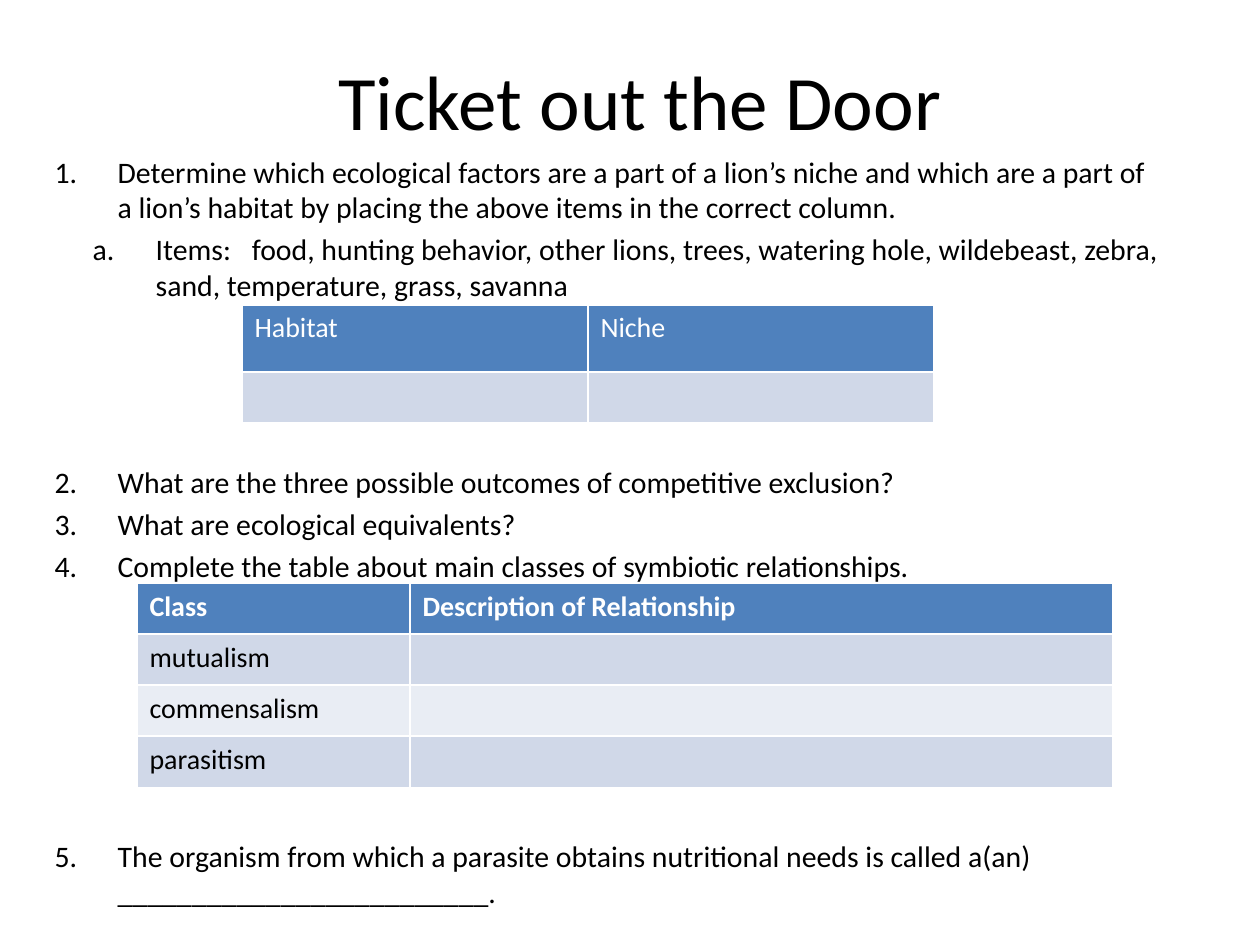
import pptx
import pptx.dml.color
import pptx.enum.text
import pptx.oxml.ns
import pptx.util
from lxml import etree

PX = 914400 / 126
FONT = "Calibri"
COLORS = {"text": "000000", "header": "4F81BD", "header_text": "FFFFFF",
          "band_dark": "D0D8E8", "band_light": "E9EDF4"}
HANGING = 63

# level, text, extra gap in points before the question
QUESTIONS = [
    (0, "Determine which ecological factors are a part of a lion’s niche and which are "
        "a part of a lion’s habitat by placing the above items in the correct column.", None),
    (1, "Items: food, hunting behavior, other lions, trees, watering hole, wildebeast, "
        "zebra, sand, temperature, grass, savanna", None),
    (0, "What are the three possible outcomes of competitive exclusion?", 92.5),
    (0, "What are ecological equivalents?", None),
    (0, "Complete the table about main classes of symbiotic relationships.", None),
    (0, "The organism from which a parasite obtains nutritional needs is called a(an) "
        "_________________________.", 145.5),
]
NUMBERING = [("arabicPeriod", 63), ("alphaLcPeriod", 101)]


def px(length):
    return pptx.util.Emu(round(length * PX))


def color(name):
    return pptx.dml.color.RGBColor.from_string(COLORS[name])


def place(shape, box):
    shape.left, shape.top, shape.width, shape.height = map(px, box)


def style_runs(para, size, color_name, bold=False):
    for span in para.runs:
        span.font.name = FONT
        span.font.size = pptx.util.Pt(size)
        span.font.bold = bold
        span.font.color.rgb = color(color_name)


def number(para, scheme, left):
    props = para._p.get_or_add_pPr()
    props.set("marL", str(px(left)))
    props.set("indent", str(-px(HANGING)))
    etree.SubElement(props, pptx.oxml.ns.qn("a:buFont")).set("typeface", FONT)
    etree.SubElement(props, pptx.oxml.ns.qn("a:buAutoNum")).set("type", scheme)


def add_label_text(para, text):
    """Write 'label: rest' with a widened space after the label."""
    label, rest = text.split(" ", 1)
    for part in (label, " ", rest):
        para.add_run().text = part
    para.runs[1]._r.get_or_add_rPr().set("spc", "800")


def fill_title(page, box):
    title = page.shapes.title
    place(title, box)
    title.text_frame.text = "Ticket out the Door"
    style_runs(title.text_frame.paragraphs[0], 44, "text")


def fill_questions(page, box):
    body = page.placeholders[1]
    place(body, box)
    frame = body.text_frame
    frame.auto_size = pptx.enum.text.MSO_AUTO_SIZE.NONE
    for index, (level, text, gap) in enumerate(QUESTIONS):
        para = frame.add_paragraph() if index else frame.paragraphs[0]
        para.level = level
        if level:
            add_label_text(para, text)
        else:
            para.text = text
        if gap:
            para.space_before = pptx.util.Pt(gap)
        number(para, *NUMBERING[level])
        style_runs(para, 17, "text")


def add_answer_table(page, left, top, widths, heights, rows, bold_header):
    frame = page.shapes.add_table(len(heights), len(widths), px(left), px(top),
                                  px(sum(widths)), px(sum(heights)))
    table = frame.table
    for column, width in zip(table.columns, widths):
        column.width = px(width)
    for r, (row, height) in enumerate(zip(table.rows, heights)):
        row.height = px(height)
        fill = "header" if r == 0 else ("band_light", "band_dark")[r % 2]
        for cell, text in zip(row.cells, rows[r]):
            cell.fill.solid()
            cell.fill.fore_color.rgb = color(fill)
            if text:
                cell.text_frame.text = text
                style_runs(cell.text_frame.paragraphs[0], 16,
                           "text" if r else "header_text", bold_header and r == 0)


def main():
    deck = pptx.Presentation()
    deck.slide_width, deck.slide_height = px(1260), px(945)
    page = deck.slides.add_slide(deck.slide_layouts[1])
    fill_title(page, (73, 32, 1134, 136))
    fill_questions(page, (42, 147, 1134, 766))
    add_answer_table(page, 242, 305, [346, 346], [67, 50],
                     [("Habitat", "Niche"), ("", "")], bold_header=False)
    add_answer_table(page, 137, 583, [273, 703], [51] * 4,
                     [("Class", "Description of Relationship"), ("mutualism", ""),
                      ("commensalism", ""), ("parasitism", "")], bold_header=True)
    deck.save("out.pptx")


if __name__ == "__main__":
    main()
